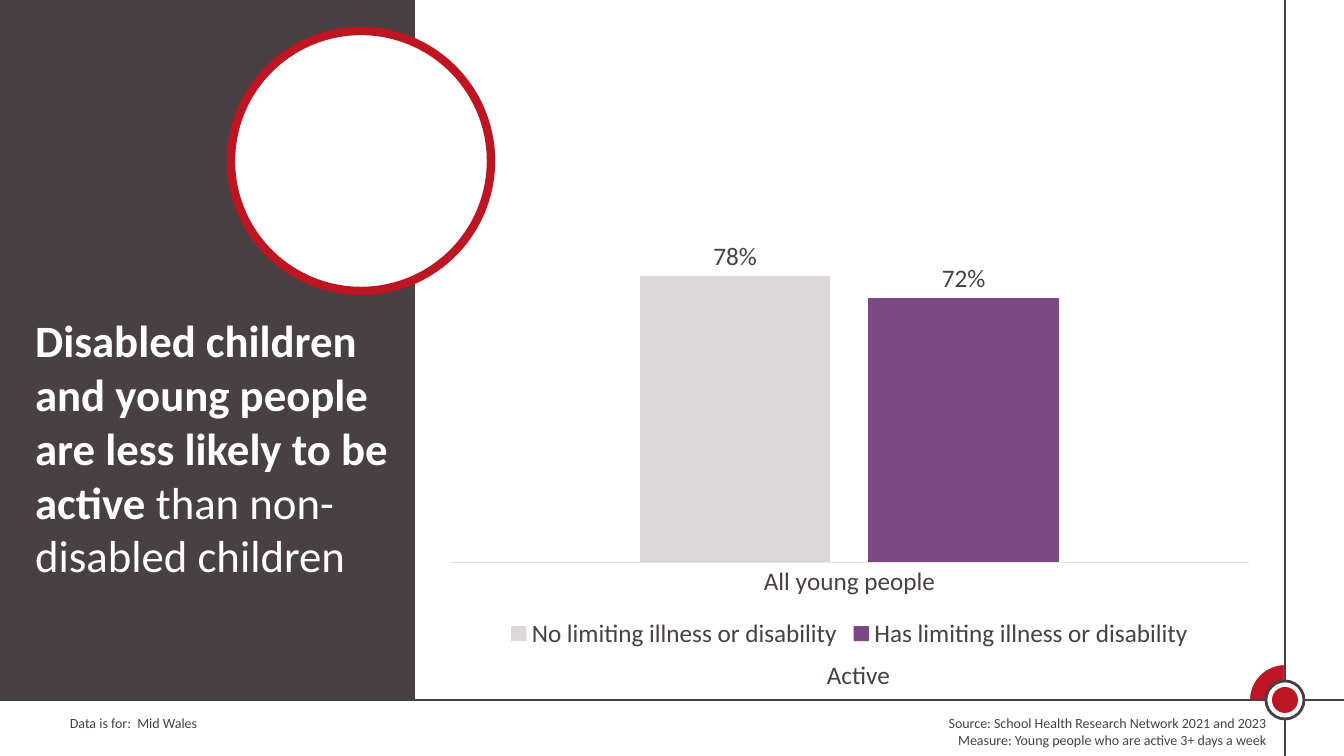
import pptx
import pptx.chart.data
import pptx.dml.color
import pptx.enum.chart
import pptx.enum.shapes
import pptx.enum.text
import pptx.oxml
import pptx.util
from dataclasses import dataclass

# Content
HEADLINE = [("Disabled children and young people are less likely to be active ", True),
            ("than non-disabled children", False)]
AREA = [[("Data is for:  Mid Wales", False)]]
SOURCES = [[("Source: School Health Research Network 2021 and 2023", False)],
           [("Measure: Young people who are active 3+ days a week", False)]]
CAPTION = [[("Active", False)]]
CATEGORIES = ["All young people"]
SERIES = [("No limiting illness or disability", [0.78], "DCD7D9"),
          ("Has limiting illness or disability", [0.72], "7C4982")]


@dataclass
class Theme:
    dark: str = "484043"
    red: str = "BD1622"
    white: str = "FFFFFF"
    axis: str = "E5E1E3"
    font: str = "Calibri"
    headline: int = 32
    body: int = 18
    note: int = 10


theme = Theme()

# Layout in px
WIDTH, HEIGHT = 1344, 756
PX = 914400 / 100.8
CROSS_X, CROSS_Y = 1285, 700
PANEL_RIGHT = 415

SHAPE = pptx.enum.shapes.MSO_SHAPE
ALIGN = pptx.enum.text.PP_ALIGN


def emu(*lengths):
    return [round(length * PX) for length in lengths]


def color(code):
    return pptx.dml.color.RGBColor.from_string(code)


def set_font(font, size, code=theme.dark, bold=False):
    font.name = theme.font
    font.size = pptx.util.Pt(size)
    font.bold = bold
    font.color.rgb = color(code)


def write(box, paragraphs, size=theme.note, code=theme.dark, align=ALIGN.LEFT):
    frame = box.text_frame
    frame.word_wrap = True
    frame.auto_size = pptx.enum.text.MSO_AUTO_SIZE.NONE
    frame.vertical_anchor = pptx.enum.text.MSO_ANCHOR.TOP
    for index, spans in enumerate(paragraphs):
        para = frame.add_paragraph() if index else frame.paragraphs[0]
        para.alignment = align
        for text, bold in spans:
            span = para.add_run()
            span.text = text
            set_font(span.font, size, code, bold)


def add_text(page, place, paragraphs, **style):
    write(page.shapes.add_textbox(*emu(*place)), paragraphs, **style)


def add_figure(page, kind, place, fill, line=None, weight=0):
    figure = page.shapes.add_shape(kind, *emu(*place))
    figure.shadow.inherit = False
    figure.fill.solid()
    figure.fill.fore_color.rgb = color(fill)
    if line:
        figure.line.color.rgb = color(line)
        figure.line.width = pptx.util.Pt(weight)
    else:
        figure.line.fill.background()
    return figure


def centred(diameter):
    return (CROSS_X - diameter / 2, CROSS_Y - diameter / 2, diameter, diameter)


def add_rule(page, *ends):
    rule = page.shapes.add_connector(pptx.enum.shapes.MSO_CONNECTOR.STRAIGHT, *emu(*ends))
    rule.line.color.rgb = color(theme.dark)
    rule.line.width = pptx.util.Pt(1)
    rule.element.spPr.append(pptx.oxml.parse_xml(
        '<a:effectLst xmlns:a="http://schemas.openxmlformats.org/drawingml/2006/main"/>'))


def add_activity_chart(page, place):
    data = pptx.chart.data.CategoryChartData(number_format="0%")
    data.categories = CATEGORIES
    for name, values, _ in SERIES:
        data.add_series(name, values)
    chart = page.shapes.add_chart(
        pptx.enum.chart.XL_CHART_TYPE.COLUMN_CLUSTERED, *emu(*place), data).chart
    chart.has_title = False
    set_font(chart.font, theme.body)

    # Axes
    values_axis = chart.value_axis
    values_axis.minimum_scale, values_axis.maximum_scale = 0, 1
    values_axis.has_major_gridlines = False
    values_axis.visible = False
    names_axis = chart.category_axis
    names_axis.major_tick_mark = pptx.enum.chart.XL_TICK_MARK.NONE
    names_axis.format.line.color.rgb = color(theme.axis)
    names_axis.format.line.width = pptx.util.Pt(0.75)
    set_font(names_axis.tick_labels.font, theme.body)

    # Legend
    chart.has_legend = True
    chart.legend.position = pptx.enum.chart.XL_LEGEND_POSITION.BOTTOM
    chart.legend.include_in_layout = False
    set_font(chart.legend.font, theme.body)

    # Columns
    plot = chart.plots[0]
    plot.vary_by_categories = False
    plot.gap_width, plot.overlap = 200, -20
    for series, (_, _, fill) in zip(plot.series, SERIES):
        series.format.fill.solid()
        series.format.fill.fore_color.rgb = color(fill)
        labels = series.data_labels
        labels.show_value = True
        labels.number_format = "0%"
        labels.number_format_is_linked = False
        labels.position = pptx.enum.chart.XL_LABEL_POSITION.OUTSIDE_END
        set_font(labels.font, theme.body)


def main():
    deck = pptx.Presentation()
    deck.slide_width, deck.slide_height = emu(WIDTH, HEIGHT)
    page = deck.slides.add_slide(deck.slide_layouts[5])

    # Crossing rules and badge
    wedge = add_figure(page, SHAPE.PIE, centred(72), theme.red, theme.white, 1.5)
    wedge.adjustments[0], wedge.adjustments[1] = 106.62, 162
    add_rule(page, CROSS_X, 0, CROSS_X, HEIGHT)
    add_rule(page, 0, CROSS_Y, WIDTH, CROSS_Y)
    add_figure(page, SHAPE.OVAL, centred(38), theme.white, theme.dark, 2)
    add_figure(page, SHAPE.OVAL, centred(26), theme.red)

    # Side panel with ring
    add_figure(page, SHAPE.RECTANGLE, (0, 0, PANEL_RIGHT, CROSS_Y), theme.dark)
    add_figure(page, SHAPE.OVAL, (231, 31, 260, 260), theme.white, theme.red, 6)

    # Headline, brought in front of the panel
    title = page.shapes.title
    title.left, title.top, title.width, title.height = emu(25, 308, 374, 336)
    write(title, [HEADLINE], size=theme.headline, code=theme.white)
    title.element.getparent().append(title.element)

    # Chart and its caption
    add_activity_chart(page, (433, 186, 833, 468))
    add_text(page, (817, 654, 123, 40), CAPTION, size=theme.body)

    # Footer
    add_text(page, (60, 710, 442, 27), AREA)
    add_text(page, (624, 710, 652, 44), SOURCES, align=ALIGN.RIGHT)

    deck.save("out.pptx")


if __name__ == "__main__":
    main()
